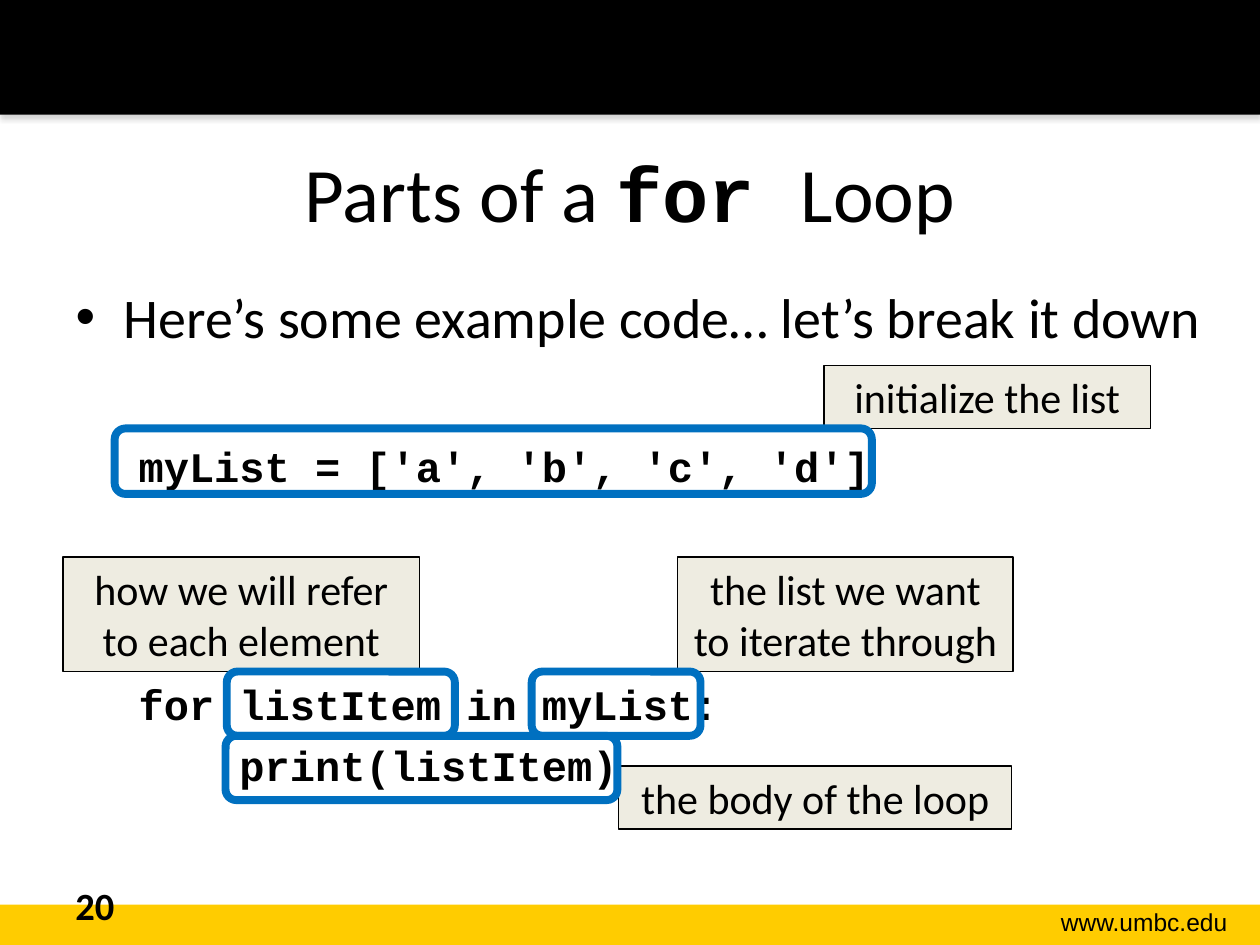
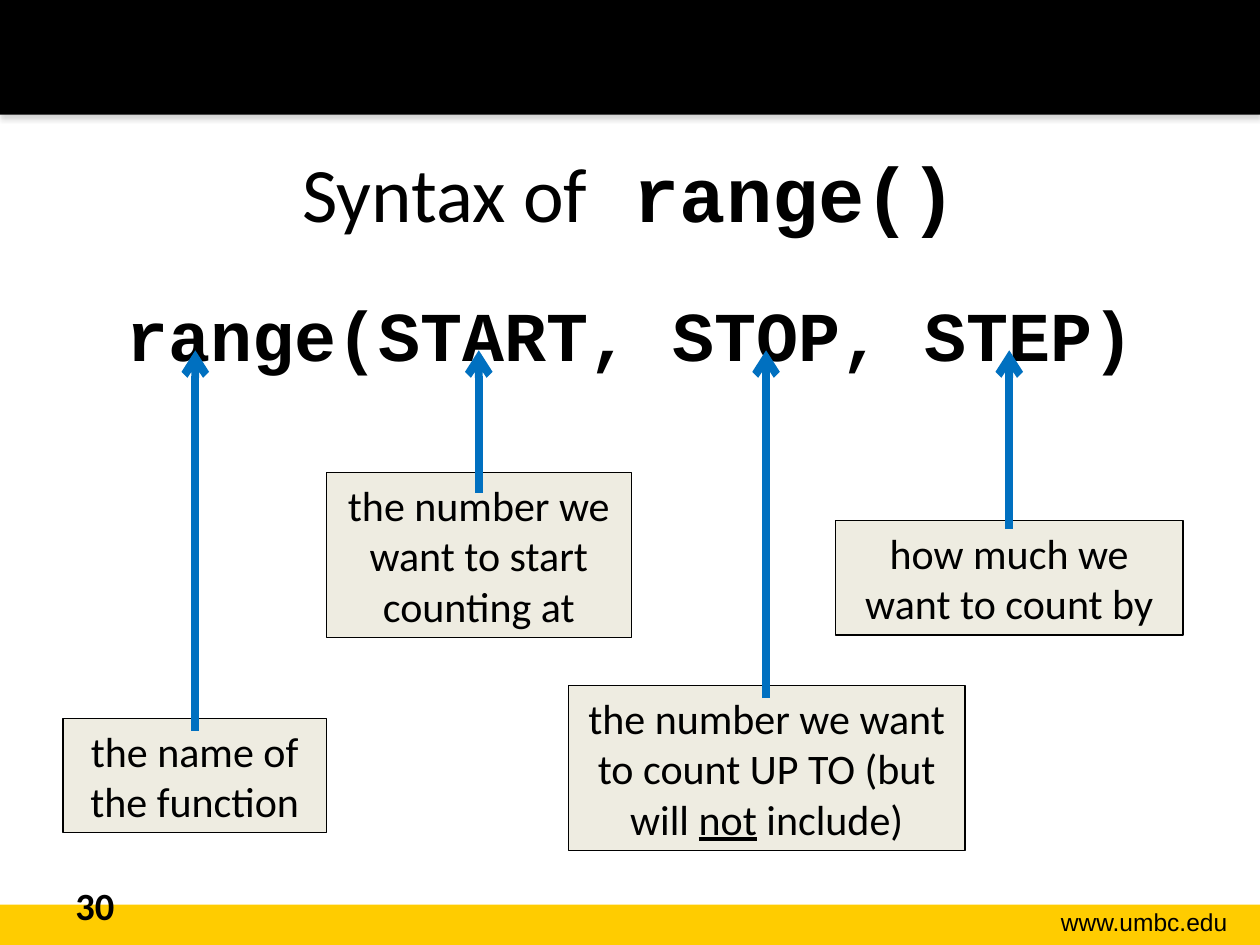
"""Build two slides on Python for loops and range()."""
from typing import NamedTuple

from lxml.etree import SubElement
from pptx import Presentation
from pptx.dml.color import RGBColor
from pptx.enum.shapes import MSO_CONNECTOR, MSO_SHAPE
from pptx.enum.text import MSO_ANCHOR, MSO_AUTO_SIZE, PP_ALIGN
from pptx.oxml.ns import qn
from pptx.util import Inches, Pt

HUES = {"ink": "000000", "gold": "FFCC00", "note": "EEECE1",
        "blue": "0070C0", "shade": "808080"}
SANS, CODE, SITE = "Calibri", "Courier New", "Arial"


class Run(NamedTuple):
    """A stretch of text in one style."""
    text: str
    size: float = 24
    font: str = SANS
    bold: bool = False
    under: bool = False


class Box(NamedTuple):
    """A place on the slide, in inches."""
    left: float
    top: float
    width: float
    height: float


class Note(NamedTuple):
    """A beige label that explains a piece of code."""
    box: Box
    runs: tuple[Run, ...]


class Arrow(NamedTuple):
    """An upward arrow from a label to the code."""
    x: float
    start: float


def hue(name: str) -> RGBColor:
    """Return a named colour."""
    return RGBColor.from_string(HUES[name])


def place(shape, box: Box) -> None:
    """Move a shape to its box."""
    shape.left, shape.top, shape.width, shape.height = map(Inches, box)


def write(para, runs: tuple[Run, ...], align=PP_ALIGN.LEFT) -> None:
    """Fill a paragraph run by run."""
    para.alignment = align
    for item in runs:
        run = para.add_run()
        run.text = item.text
        font = run.font
        font.size, font.name = Pt(item.size), item.font
        font.bold, font.underline = item.bold, item.under
        font.color.rgb = hue("ink")


def add_rect(slide, box: Box, fill: str = "", line: str = "",
             width: float = 0.75, kind=MSO_SHAPE.RECTANGLE):
    """Draw a plain shape without a shadow."""
    shape = slide.shapes.add_shape(kind, *map(Inches, box))
    shape.shadow.inherit = False
    if fill:
        shape.fill.solid()
        shape.fill.fore_color.rgb = hue(fill)
    else:
        shape.fill.background()
    if line:
        shape.line.color.rgb = hue(line)
        shape.line.width = Pt(width)
    else:
        shape.line.fill.background()
    return shape


def add_text(slide, box: Box, run: Run, align=PP_ALIGN.LEFT) -> None:
    """Add a one-line text box."""
    frame = slide.shapes.add_textbox(*map(Inches, box)).text_frame
    frame.word_wrap = True
    write(frame.paragraphs[0], (run,), align)


def add_shade(shape) -> None:
    """Cast a soft shadow below a shape."""
    effects = shape._element.spPr.find(qn("a:effectLst"))
    outer = SubElement(effects, qn("a:outerShdw"), blurRad=str(Pt(3.1)),
                       dist=str(Pt(1.8)), dir="5400000", rotWithShape="0")
    color = SubElement(outer, qn("a:srgbClr"), val=HUES["shade"])
    SubElement(color, qn("a:alpha"), val="35000")


def add_note(slide, note: Note) -> None:
    """Draw a label."""
    frame = add_rect(slide, note.box, "note", "ink").text_frame
    frame.word_wrap = True
    frame.vertical_anchor = MSO_ANCHOR.MIDDLE
    write(frame.paragraphs[0], note.runs, PP_ALIGN.CENTER)


def add_arrow(slide, arrow: Arrow, tip: float = 2.78) -> None:
    """Draw an arrow that points up at the code."""
    x = Inches(arrow.x)
    line = slide.shapes.add_connector(
        MSO_CONNECTOR.STRAIGHT, x, Inches(arrow.start), x, Inches(tip))
    line.line.color.rgb = hue("blue")
    line.line.width = Pt(4.5)
    SubElement(line.line._get_or_add_ln(), qn("a:tailEnd"), type="arrow")
    SubElement(line._element.spPr, qn("a:effectLst"))


def add_para(frame, run: Run, gap: float = 0, indent: float = 0,
             bullet: bool = False, align=PP_ALIGN.LEFT) -> None:
    """Add a body paragraph with its indent and bullet."""
    para = frame.paragraphs[0]
    if para.runs:
        para = frame.add_paragraph()
    para.space_before = Pt(gap)
    props = para._p.get_or_add_pPr()
    hang = -indent if bullet else 0
    props.set("marL", str(Inches(indent)))
    props.set("indent", str(Inches(hang)))
    if bullet:
        SubElement(props, qn("a:buFont"), typeface=SITE)
        SubElement(props, qn("a:buChar"), char="•")
    else:
        SubElement(props, qn("a:buNone"))
    write(para, (run,), align)


def add_page(deck, title: tuple[Run, ...], number: str, wide: float,
             inset: float):
    """Add a slide with bands, footer and title; return it with its body."""
    slide = deck.slides.add_slide(deck.slide_layouts[1])
    add_rect(slide, Box(0, 7.18, 10, 0.32), "gold")
    add_shade(add_rect(slide, Box(0, 0, 10, 0.91), "ink"))
    add_text(slide, Box(7.85, 7.15, 1.99, 0.34),
             Run("www.umbc.edu", 14, SITE), PP_ALIGN.RIGHT)
    add_text(slide, Box(0.5, 6.95, 2.33, 0.4), Run(number, 22, bold=True))
    head, body = slide.placeholders
    place(head, Box(0.5, 0.9, 9, 1.25))
    place(body, Box(0.5, 2.15, wide, 4.55))
    for item in (head, body):
        item.text_frame.auto_size = MSO_AUTO_SIZE.NONE
        item.text_frame.word_wrap = True
    head.text_frame.vertical_anchor = MSO_ANCHOR.MIDDLE
    write(head.text_frame.paragraphs[0], title, PP_ALIGN.CENTER)
    body.text_frame.margin_top = Inches(inset)
    return slide, body.text_frame


def add_parts(deck) -> None:
    """Build the slide on the parts of a for loop."""
    title = (Run("Parts of a ", 44), Run("for ", 44, CODE, True),
             Run("Loop", 44))
    slide, body = add_page(deck, title, "20", 9.37, 0.09)
    add_para(body, Run("Here’s some example code… let’s break it down", 32),
             indent=0.38, bullet=True)
    lines = (("myList = ['a', 'b', 'c', 'd']", 52),
             ("for listItem in myList:", 107),
             ("    print(listItem)", 6.4))
    for text, gap in lines:
        add_para(body, Run(text, 24, CODE, True), gap, 0.5)
    pairs = (
        (Box(6.54, 2.9, 2.59, 0.5), "initialize the list",
         Box(0.91, 3.4, 6.01, 0.52)),
        (Box(5.38, 4.42, 2.66, 0.91), "the list we want to iterate through",
         Box(4.22, 5.33, 1.34, 0.51)),
        (Box(0.5, 4.42, 2.83, 0.91), "how we will refer to each element",
         Box(1.8, 5.33, 1.81, 0.51)),
        (Box(4.91, 6.08, 3.12, 0.5), "the body of the loop",
         Box(1.79, 5.84, 3.11, 0.51)),
    )
    for box, text, frame in pairs:
        add_note(slide, Note(box, (Run(text),)))
        add_rect(slide, frame, line="blue", width=4.5,
                 kind=MSO_SHAPE.ROUNDED_RECTANGLE)


def add_range(deck) -> None:
    """Build the slide on the syntax of range()."""
    title = Run("Syntax of", 44), Run(" range()", 44, CODE, True)
    slide, body = add_page(deck, title, "30", 9, 0.16)
    add_para(body, Run("range(START, STOP, STEP)", 40, CODE, True),
             align=PP_ALIGN.CENTER)
    pairs = (
        (Note(Box(0.5, 5.7, 2.09, 0.91), (Run("the name of the function"),)),
         Arrow(1.55, 5.8)),
        (Note(Box(2.59, 3.75, 2.42, 1.31),
              (Run("the number we want to start counting at"),)),
         Arrow(3.8, 3.91)),
        (Note(Box(4.51, 5.44, 3.15, 1.31),
              (Run("the number we want to count UP TO (but will "),
               Run("not", under=True), Run(" include)"))),
         Arrow(6.08, 5.54)),
        (Note(Box(6.63, 4.13, 2.76, 0.91),
              (Run("how much we want to count by"),)),
         Arrow(8.01, 4.2)),
    )
    for note, arrow in pairs:
        add_note(slide, note)
        add_arrow(slide, arrow)


def main() -> None:
    """Build and save the deck."""
    deck = Presentation()
    deck.slide_width, deck.slide_height = Inches(10), Inches(7.5)
    add_parts(deck)
    add_range(deck)
    deck.save("out.pptx")


if __name__ == "__main__":
    main()
